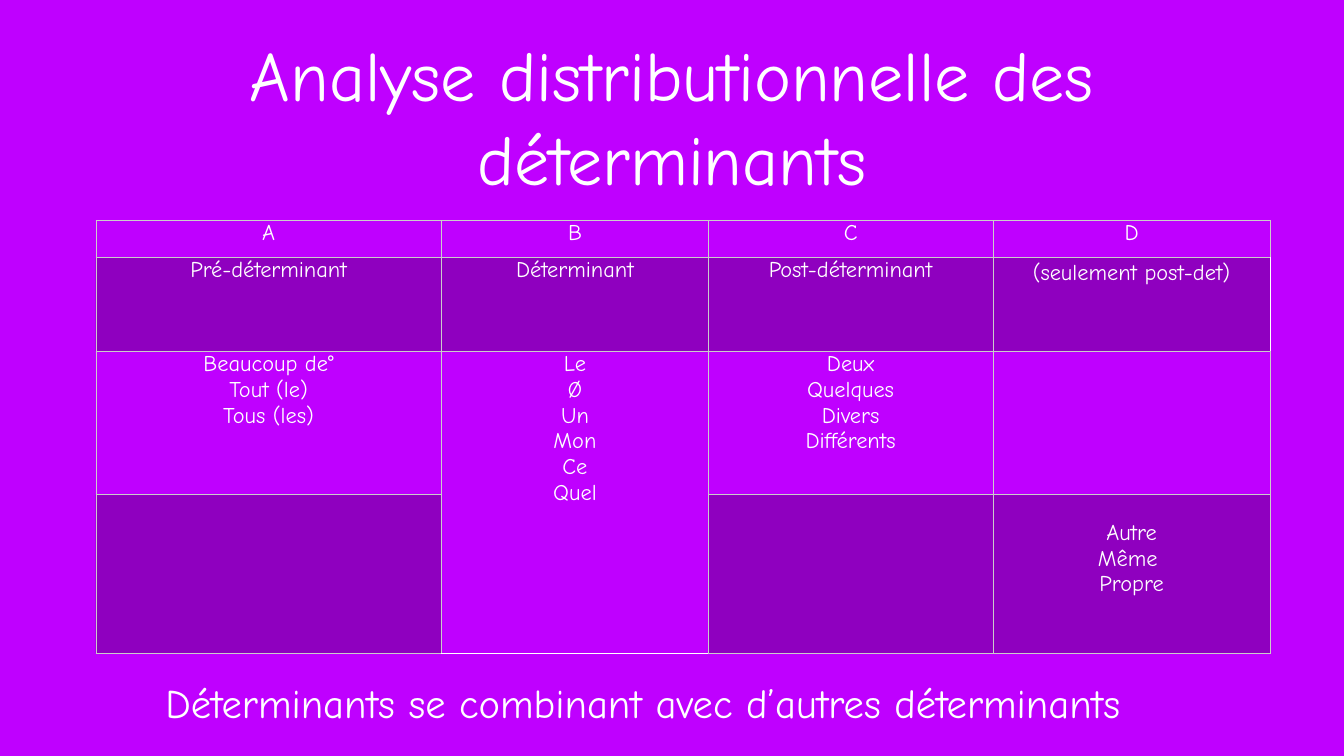
from lxml import etree
from pptx import Presentation
from pptx.dml.color import RGBColor
from pptx.enum.text import MSO_ANCHOR, MSO_AUTO_SIZE, PP_ALIGN
from pptx.oxml.ns import qn
from pptx.util import Inches, Pt

CENTER = PP_ALIGN.CENTER
MIDDLE = MSO_ANCHOR.MIDDLE
GROW, FIXED = MSO_AUTO_SIZE.SHAPE_TO_FIT_TEXT, MSO_AUTO_SIZE.NONE

VIOLET = RGBColor(0xBF, 0x00, 0xFF)
WHITE = RGBColor(0xFF, 0xFF, 0xFF)
BLACK = RGBColor(0x00, 0x00, 0x00)
GRAY = RGBColor(0xCB, 0xCB, 0xCB)

FONT = "Comic Neue"
COLUMNS = [6.86, 5.3, 5.64, 5.51]
ROWS = [0.74, 1.86, 2.84, 3.15]
TEXTS = [
    ["A", "B", "C", "D"],
    ["Pré-déterminant", "Déterminant", "Post-déterminant", "(seulement post-det)"],
    ["Beaucoup de°\nTout (le)\nTous (les)", "Le\nØ\nUn\nMon\nCe\nQuel",
     "Deux\nQuelques\nDivers\nDifférents", ""],
    ["", "", "", "Autre\nMême \nPropre"],
]
SHADED_ROWS = (1, 3)
MERGED_COLUMN = 1
THIN = (GRAY, 0.5, 100)
SOFT = (WHITE, 1, 50)
EDGES = {(1, 3): {"R": SOFT}, (2, 1): {"B": SOFT}, (3, 1): {"B": SOFT}}
MARGINS = {(1, 3): (0.06, 0.06), (3, 3): (0.07, 0.51)}


def write(tf, text, size):
    """Fill a text frame with centred white paragraphs."""
    for i, line in enumerate(text.split("\n")):
        p = tf.paragraphs[0] if i == 0 else tf.add_paragraph()
        p.alignment = CENTER
        if not line:
            p.font.size = Pt(size)
            continue
        r = p.add_run()
        r.text = line
        for name, value in {"name": FONT, "size": Pt(size)}.items():
            setattr(r.font, name, value)
        r.font.color.rgb = WHITE


def add_text(s, box, text, size, wrap, auto_size):
    """Add a vertically centred line of text in the given box."""
    tf = s.shapes.add_textbox(*map(Inches, box)).text_frame
    pad = Inches(0.06)
    settings = {"word_wrap": wrap, "auto_size": auto_size, "vertical_anchor": MIDDLE,
                "margin_left": pad, "margin_right": pad,
                "margin_top": pad, "margin_bottom": pad}
    for name, value in settings.items():
        setattr(tf, name, value)
    write(tf, text, size)


def set_border(cell, side, color, width, alpha):
    """Draw one solid edge of a table cell."""
    tcPr = cell._tc.get_or_add_tcPr()
    ln = etree.SubElement(tcPr, qn(f"a:ln{side}"), w=str(Pt(width)))
    fill = etree.SubElement(ln, qn("a:solidFill"))
    clr = etree.SubElement(fill, qn("a:srgbClr"), val=str(color))
    etree.SubElement(clr, qn("a:alpha"), val=str(alpha * 1000))


def shade(cell):
    """Darken a cell with translucent black."""
    cell.fill.solid()
    cell.fill.fore_color.rgb = BLACK
    clr = cell._tc.tcPr.find(qn("a:solidFill")).find(qn("a:srgbClr"))
    etree.SubElement(clr, qn("a:alpha"), val="25000")


def add_determiner_table(s, box):
    """Add the table of determiner classes in the given box."""
    table = s.shapes.add_table(len(ROWS), len(COLUMNS), *map(Inches, box)).table
    table.first_row = table.horz_banding = False
    for column, width in zip(table.columns, COLUMNS):
        column.width = Inches(width)
    for row, height in zip(table.rows, ROWS):
        row.height = Inches(height)
    table.cell(2, MERGED_COLUMN).merge(table.cell(3, MERGED_COLUMN))
    for r, texts in enumerate(TEXTS):
        for c, text in enumerate(texts):
            cell = table.cell(r, c)
            side, top = MARGINS.get((r, c), (0.07, 0))
            cell.margin_left = cell.margin_right = Inches(side)
            cell.margin_top = Inches(top)
            cell.margin_bottom = Inches(0.06 if (r, c) == (1, 3) else 0)
            for edge in "LRTB":
                set_border(cell, edge, *EDGES.get((r, c), {}).get(edge, THIN))
            if r in SHADED_ROWS and not cell.is_spanned:
                shade(cell)
            else:
                cell.fill.background()
            write(cell.text_frame, text, 32)


def main():
    """Build and save the slide."""
    prs = Presentation()
    prs.slide_width, prs.slide_height = Inches(26.67), Inches(15)
    s = prs.slides.add_slide(prs.slide_layouts[6])
    s.background.fill.solid()
    s.background.fill.fore_color.rgb = VIOLET
    add_text(s, (1.94, 0.39, 22.78, 3.82),
             "Analyse distributionnelle des déterminants", 100, True, FIXED)
    add_determiner_table(s, (1.9, 4.37, sum(COLUMNS), sum(ROWS)))
    add_text(s, (-0.02, 13.37, 25.55, 1.13),
             "Déterminants se combinant avec d’autres déterminants", 58, False, GROW)
    prs.save("out.pptx")


if __name__ == "__main__":
    main()
